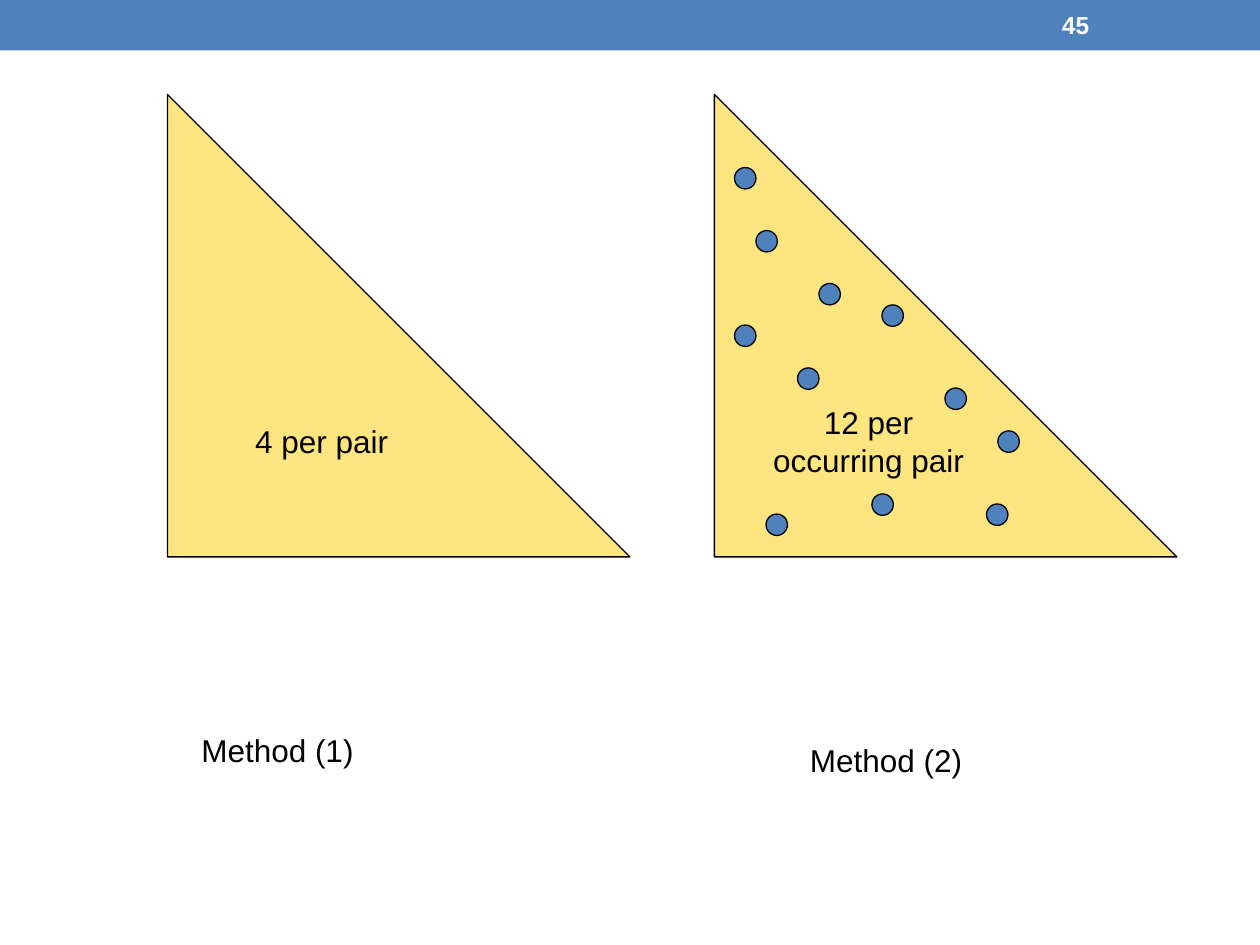
from typing import NamedTuple

from lxml import etree
from pptx import Presentation
from pptx.dml.color import RGBColor
from pptx.enum import shapes, text
from pptx.oxml.ns import qn
from pptx.util import Inches, Pt

BLUE, YELLOW, BLACK, WHITE = "4F81BD", "FFCC00", "000000", "FFFFFF"
TRIANGLE_TOP, TRIANGLE_SIZE, DOT_SIZE = 0.75, 3.67, 0.17


class Method(NamedTuple):
    triangle_left: float
    cost: list[str]
    label: str
    label_left: float
    label_top: float


class Dot(NamedTuple):
    left: float
    top: float


METHODS = [
    Method(1.33, ["4 per pair"], "Method (1)", 1.5, 5.75),
    Method(5.67, ["12 per", "occurring pair"], "Method (2)", 6.33, 5.83),
]
DOTS = [
    Dot(7.92, 3.42), Dot(6.92, 3.92), Dot(7, 2.42), Dot(6, 1.83),
    Dot(7.5, 3.08), Dot(7.83, 4), Dot(6.08, 4.08), Dot(6.33, 2.92),
    Dot(6.5, 2.25), Dot(5.83, 1.33), Dot(5.83, 2.58),
]


def paint(color_format, value: str) -> None:
    color_format.rgb = RGBColor.from_string(value)


def write(sp, lines: list[str], size=18, color=BLACK, bold=False,
          align=text.PP_ALIGN.LEFT, anchor=text.MSO_ANCHOR.TOP, wrap=True) -> None:
    tf = sp.text_frame
    tf.word_wrap = wrap
    tf.vertical_anchor = anchor
    for i, line in enumerate(lines):
        p = tf.add_paragraph() if i else tf.paragraphs[0]
        p.alignment = align
        r = p.add_run()
        r.text = line
        r.font.name, r.font.size, r.font.bold = "Arial", Pt(size), bold
        paint(r.font.color, color)


def add_box(s, left: float, top: float, width: float, height: float):
    return s.shapes.add_textbox(*map(Inches, (left, top, width, height)))


def add_figure(s, kind, left: float, top: float, width: float, height: float,
               fill: str, line: str | None = BLACK, opacity: int = 100):
    sp = s.shapes.add_shape(kind, *map(Inches, (left, top, width, height)))
    sp.shadow.inherit = False
    sp.fill.solid()
    paint(sp.fill.fore_color, fill)
    if opacity < 100:
        color = sp._element.spPr.find(".//" + qn("a:srgbClr"))
        etree.SubElement(color, qn("a:alpha"), val=str(opacity * 1000))
    if line:
        paint(sp.line.color, line)
        sp.line.width = Pt(0.75)
    else:
        sp.line.fill.background()
    return sp


def add_method(s, method: Method) -> None:
    sp = add_figure(s, shapes.MSO_SHAPE.RIGHT_TRIANGLE, method.triangle_left,
                    TRIANGLE_TOP, TRIANGLE_SIZE, TRIANGLE_SIZE, YELLOW, opacity=50)
    write(sp, method.cost, align=text.PP_ALIGN.CENTER,
          anchor=text.MSO_ANCHOR.MIDDLE, wrap=False)
    write(add_box(s, method.label_left, method.label_top, 1.84, 0.5), [method.label])


def main() -> None:
    prs = Presentation()
    prs.slide_width, prs.slide_height = Inches(10), Inches(7.5)
    s = prs.slides.add_slide(prs.slide_layouts[6])

    # Header band with page number
    add_figure(s, shapes.MSO_SHAPE.RECTANGLE, 0, 0, 10, 0.4, BLUE, line=None)
    write(add_box(s, 8.33, 0.02, 1.17, 0.36), ["45"], size=14, color=WHITE,
          bold=True, anchor=text.MSO_ANCHOR.MIDDLE)

    # The two counting methods
    for method in METHODS:
        add_method(s, method)

    # Occurring pairs in the second triangle
    for dot in DOTS:
        add_figure(s, shapes.MSO_SHAPE.OVAL, dot.left, dot.top,
                   DOT_SIZE, DOT_SIZE, BLUE)

    prs.save("out.pptx")


if __name__ == "__main__":
    main()
